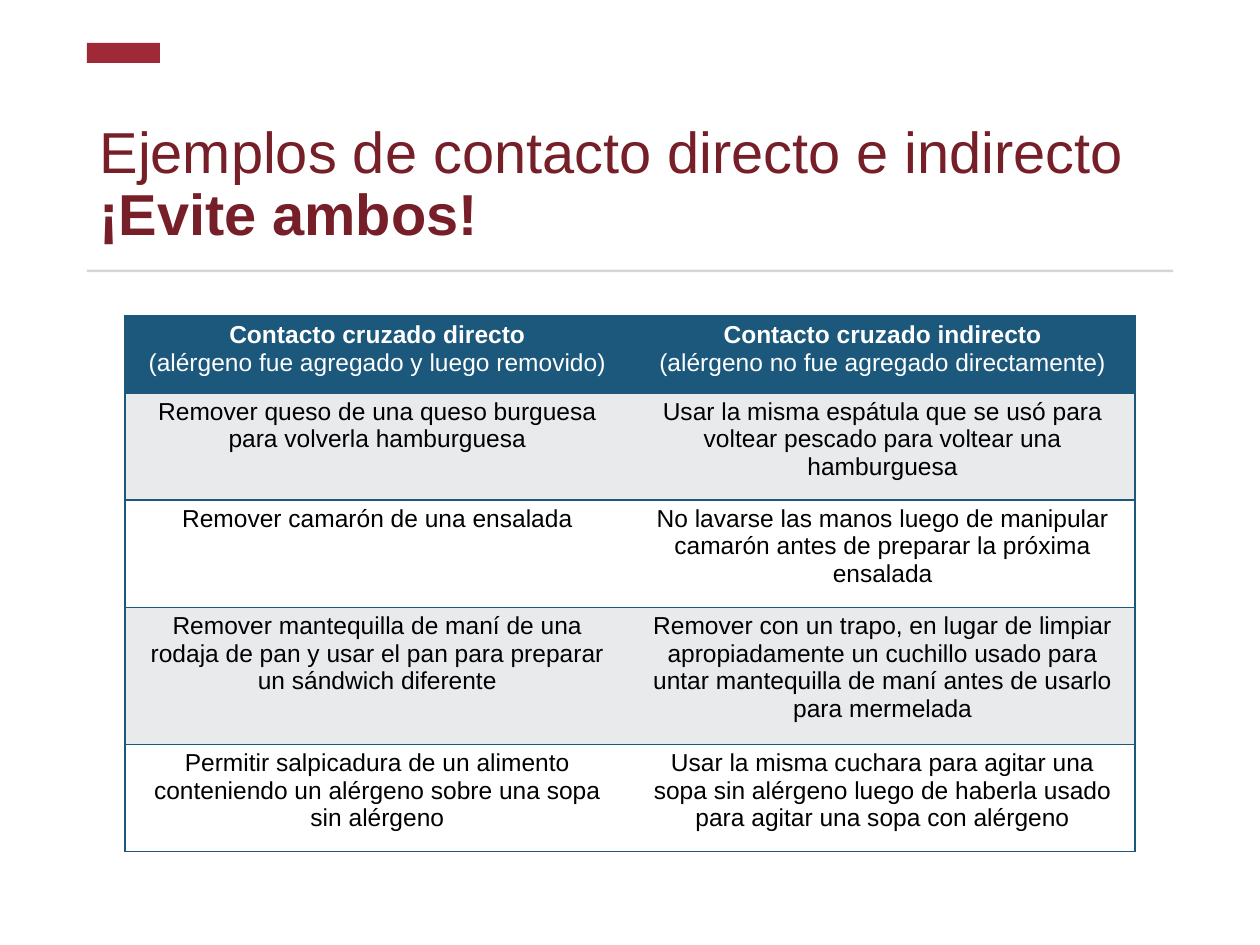
from lxml import etree
from pptx import Presentation
from pptx import util as u
from pptx.dml.color import RGBColor
from pptx.enum import shapes, text
from pptx.oxml import ns

BLUE = "1B587C"


def color(hex_code):
    return RGBColor.from_string(hex_code)


def add_border(cell, side, visible):
    line = etree.SubElement(cell._tc.get_or_add_tcPr(), ns.qn("a:ln" + side), w="12700")
    if visible:
        fill = etree.SubElement(line, ns.qn("a:solidFill"))
        etree.SubElement(fill, ns.qn("a:srgbClr"), val=BLUE)
    else:
        etree.SubElement(line, ns.qn("a:noFill"))


prs = Presentation()
prs.slide_width, prs.slide_height = u.Inches(10), u.Inches(7.5)
slide = prs.slides.add_slide(prs.slide_layouts[5])

# Title
title = slide.shapes.title
title.left, title.top = u.Inches(0.69), u.Inches(0.75)
title.width, title.height = u.Inches(8.62), u.Inches(1.27)
frame = title.text_frame
frame.text = "Ejemplos de contacto directo e indirecto\v¡Evite ambos!"
frame.word_wrap = True
frame.auto_size = text.MSO_AUTO_SIZE.NONE
frame.vertical_anchor = text.MSO_ANCHOR.BOTTOM
heading = frame.paragraphs[0]
heading.alignment = text.PP_ALIGN.LEFT
heading.line_spacing = 0.9
for run in heading.runs:
    run.font.name = "Arial"
    run.font.size = u.Pt(33)
    run.font.color.rgb = color("771F28")
heading.runs[-1].font.bold = True

# Accent bar and rule under the title
for top, width, height, fill in [(0.34, 0.58, 0.16, "9F2936"), (2.14, 8.62, 0.02, "D5D5D5")]:
    bar = slide.shapes.add_shape(shapes.MSO_SHAPE.RECTANGLE, u.Inches(0.69), u.Inches(top),
                                 u.Inches(width), u.Inches(height))
    bar.shadow.inherit = False
    bar.fill.solid()
    bar.fill.fore_color.rgb = color(fill)
    bar.line.fill.background()

# Comparison table: direct and indirect contact
examples = [
    ("Contacto cruzado directo\n(alérgeno fue agregado y luego removido)",
     "Contacto cruzado indirecto\n(alérgeno no fue agregado directamente)"),
    ("Remover queso de una queso burguesa para volverla hamburguesa",
     "Usar la misma espátula que se usó para voltear pescado para voltear una hamburguesa"),
    ("Remover camarón de una ensalada",
     "No lavarse las manos luego de manipular camarón antes de preparar la próxima ensalada"),
    ("Remover mantequilla de maní de una rodaja de pan y usar el pan para preparar "
     "un sándwich diferente",
     "Remover con un trapo, en lugar de limpiar apropiadamente un cuchillo usado para "
     "untar mantequilla de maní antes de usarlo para mermelada"),
    ("Permitir salpicadura de un alimento conteniendo un alérgeno sobre una sopa sin alérgeno",
     "Usar la misma cuchara para agitar una sopa sin alérgeno luego de haberla usado "
     "para agitar una sopa con alérgeno"),
]
row_heights = [0.61, 0.85, 0.85, 1.09, 0.85]
comparison = slide.shapes.add_table(len(examples), 2, u.Inches(0.99), u.Inches(2.51),
                                    u.Inches(8.02), u.Inches(sum(row_heights))).table
for column in comparison.columns:
    column.width = u.Inches(4.01)

for r, (row, height) in enumerate(zip(examples, row_heights)):
    comparison.rows[r].height = u.Inches(height)
    for c, wording in enumerate(row):
        cell = comparison.cell(r, c)
        for side, visible in [("L", c == 0), ("R", c == 1), ("T", True), ("B", True)]:
            add_border(cell, side, visible)
        cell.fill.solid()
        cell.fill.fore_color.rgb = color(BLUE if r == 0 else "E8EAEC" if r % 2 else "FFFFFF")
        cell.margin_left = cell.margin_right = u.Inches(0.09)
        cell.margin_top = cell.margin_bottom = u.Inches(0.04)
        cell.text_frame.text = wording
        for p, paragraph in enumerate(cell.text_frame.paragraphs):
            paragraph.alignment = text.PP_ALIGN.CENTER
            font = paragraph.runs[0].font
            font.name = "Arial"
            font.size = u.Pt(14)
            font.bold = r == 0 and p == 0
            font.color.rgb = color("FFFFFF" if r == 0 else "000000")

prs.save("out.pptx")
